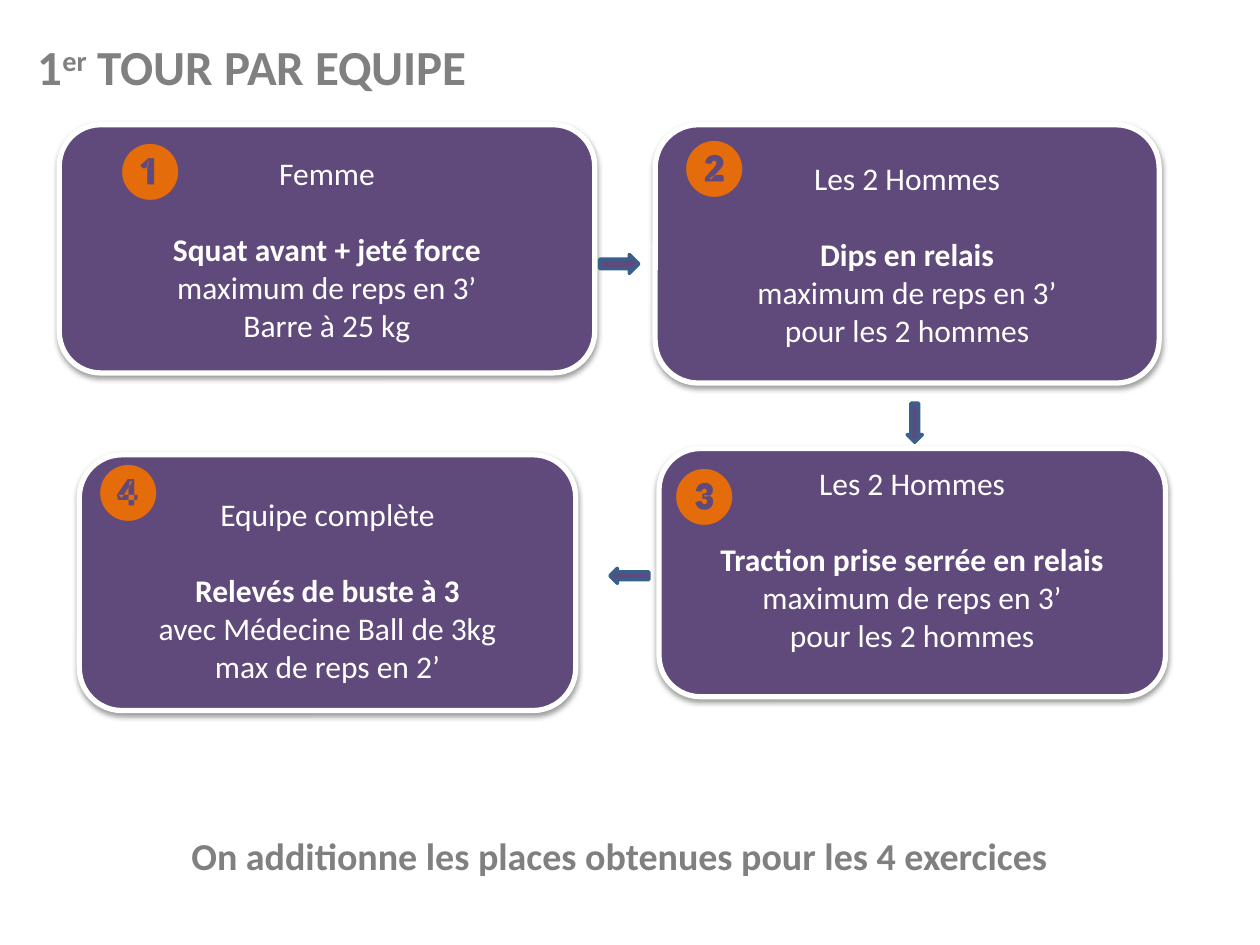
from dataclasses import dataclass

from lxml import etree
from pptx import Presentation
from pptx.dml.color import RGBColor
from pptx.enum.shapes import MSO_SHAPE
from pptx.enum.text import MSO_ANCHOR, PP_ALIGN
from pptx.oxml.ns import qn
from pptx.util import Inches, Pt

ROUNDED = MSO_SHAPE.ROUNDED_RECTANGLE
RIGHT, LEFT, DOWN = MSO_SHAPE.RIGHT_ARROW, MSO_SHAPE.LEFT_ARROW, MSO_SHAPE.DOWN_ARROW
MIDDLE, TOP = MSO_ANCHOR.MIDDLE, MSO_ANCHOR.TOP
CENTER = PP_ALIGN.CENTER

FONT = "Calibri"
PURPLE, BLUE, ORANGE, GREY, WHITE = "604A7B", "3A5F8C", "E46C0A", "808080", "FFFFFF"


@dataclass
class Box:
    x: float
    y: float
    w: float
    h: float

    def emu(self):
        return [Inches(v) for v in (self.x, self.y, self.w, self.h)]


@dataclass
class Card:
    box: Box
    who: str
    exercise: str
    details: tuple[str, ...]
    badge: str
    badge_at: tuple[float, float]
    inset_top: float = 0.05
    inset_bottom: float = 0.05


@dataclass
class Arrow:
    kind: MSO_SHAPE
    box: Box


CARDS = [
    Card(Box(0.47, 0.99, 4.25, 1.97), "Femme", "Squat avant + jeté force",
         ("maximum de reps en 3’", "Barre à 25 kg"), "❶", (0.8, 1.01)),
    Card(Box(5.2, 0.99, 4, 2.05), "Les 2 Hommes", "Dips en relais",
         ("maximum de reps en 3’", "pour les 2 hommes"), "❷", (5.28, 0.99)),
    Card(Box(5.23, 3.56, 4.02, 1.97), "Les 2 Hommes", "Traction prise serrée en relais",
         ("maximum de reps en 3’", "pour les 2 hommes"), "❸", (5.2, 3.59),
         inset_bottom=0.27),
    Card(Box(0.63, 3.61, 3.94, 2.03), "Equipe complète", "Relevés de buste à 3",
         ("avec Médecine Ball de 3kg", "max de reps en 2’"), "❹", (0.63, 3.56),
         inset_top=0.16),
]

ARROWS = [
    Arrow(RIGHT, Box(4.76, 2.02, 0.31, 0.15)),
    Arrow(DOWN, Box(7.2, 3.2, 0.12, 0.31)),
    Arrow(LEFT, Box(4.84, 4.51, 0.31, 0.12)),
]


def rgb(value: str) -> RGBColor:
    return RGBColor.from_string(value)


def add_run(p, text: str, size: float, color: str, bold: bool = False):
    r = p.add_run()
    r.text = text
    r.font.name, r.font.size, r.font.bold = FONT, Pt(size), bold
    r.font.color.rgb = rgb(color)
    return r


def add_figure(slide, kind: MSO_SHAPE, box: Box, line: str, width: float):
    sp = slide.shapes.add_shape(kind, *box.emu())
    sp.shadow.inherit = False
    sp.fill.solid()
    sp.fill.fore_color.rgb = rgb(PURPLE)
    sp.line.color.rgb = rgb(line)
    sp.line.width = Pt(width)
    return sp


def add_shadow(sp) -> None:
    """Put a soft black shadow just below the shape."""
    effects = sp._element.spPr.find(qn("a:effectLst"))
    shadow = etree.SubElement(effects, qn("a:outerShdw"), blurRad=str(Pt(3.1)),
                              dist=str(Pt(1.6)), dir="5400000", rotWithShape="0")
    color = etree.SubElement(shadow, qn("a:srgbClr"), val="000000")
    etree.SubElement(color, qn("a:alpha"), val="38000")


def add_text(slide, box: Box, anchor: MSO_ANCHOR):
    """Add an empty wrapping text box and return its first paragraph."""
    tf = slide.shapes.add_textbox(*box.emu()).text_frame
    tf.word_wrap = True
    tf.vertical_anchor = anchor
    return tf.paragraphs[0]


def add_card(slide, card: Card) -> None:
    sp = add_figure(slide, ROUNDED, card.box, WHITE, 3)
    add_shadow(sp)
    tf = sp.text_frame
    tf.word_wrap = True
    tf.vertical_anchor = MIDDLE
    tf.margin_top, tf.margin_bottom = Inches(card.inset_top), Inches(card.inset_bottom)
    for i, text in enumerate((card.who, card.exercise, *card.details)):
        p = tf.paragraphs[0] if i == 0 else tf.add_paragraph()
        p.alignment = CENTER
        is_exercise = i == 1
        if is_exercise:
            p.space_before = Pt(22)
        add_run(p, text, 18, WHITE, is_exercise)


def add_badge(slide, card: Card) -> None:
    p = add_text(slide, Box(*card.badge_at, 0.82, 0.64), TOP)
    add_run(p, card.badge, 32, ORANGE, True)


def main() -> None:
    prs = Presentation()
    prs.slide_width, prs.slide_height = Inches(10), Inches(7.5)
    slide = prs.slides.add_slide(prs.slide_layouts[6])

    title = add_text(slide, Box(0.2, 0.17, 9.45, 0.71), MIDDLE)
    add_run(title, "1", 28, GREY, True)
    ordinal = add_run(title, "er", 28, GREY, True)
    ordinal._r.get_or_add_rPr().set("baseline", "30000")
    add_run(title, " TOUR PAR EQUIPE", 28, GREY, True)

    for card in CARDS:
        add_card(slide, card)
        add_badge(slide, card)
    for arrow in ARROWS:
        add_figure(slide, arrow.kind, arrow.box, BLUE, 2)

    footer = add_text(slide, Box(1.42, 6.43, 7.48, 0.71), MIDDLE)
    add_run(footer, "On additionne les places obtenues pour les 4 exercices", 21.7, GREY, True)

    prs.save("out.pptx")


if __name__ == "__main__":
    main()
